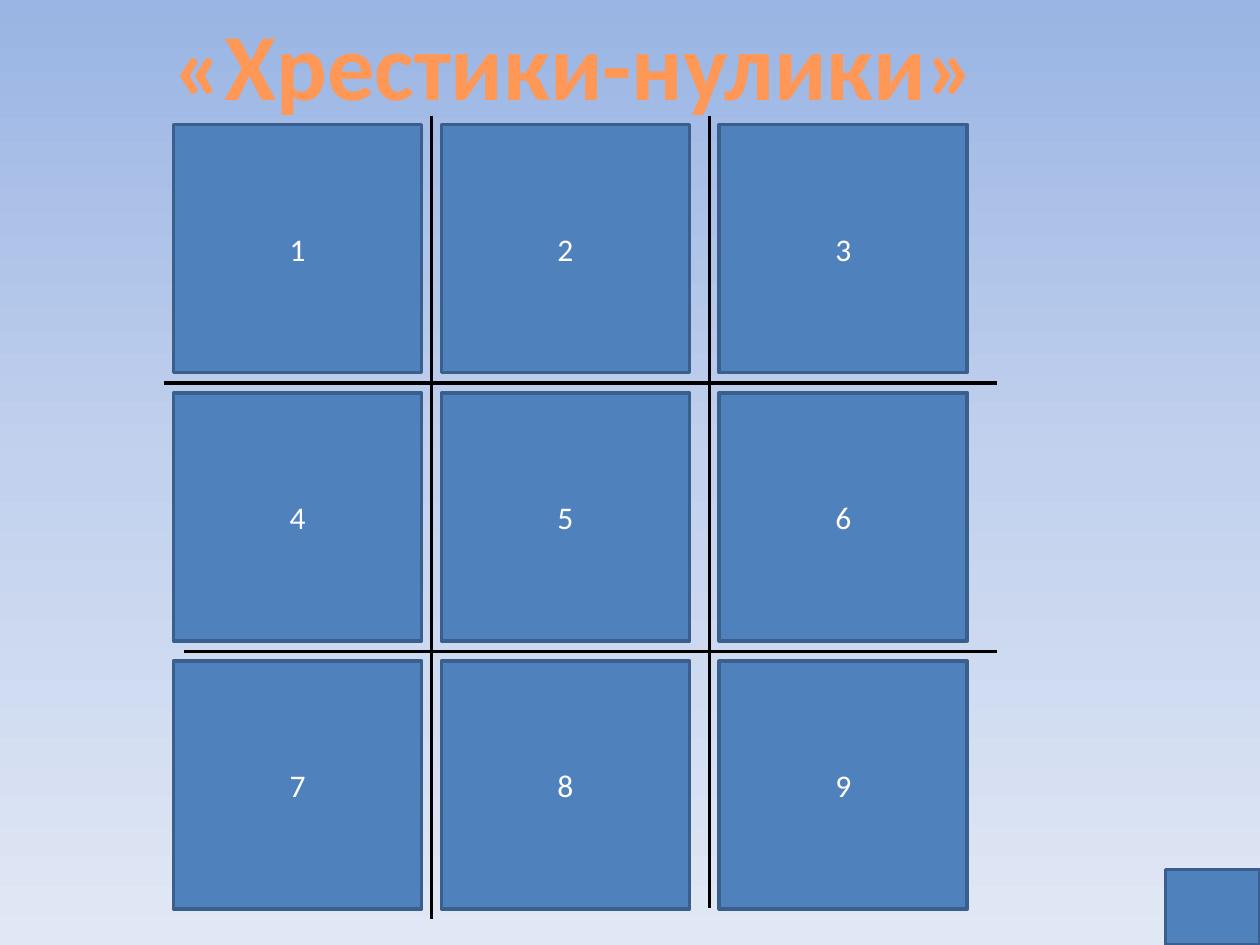
"""Build a tic-tac-toe game board slide with nine numbered cells."""
from copy import deepcopy

from pptx import Presentation
from pptx.dml.color import RGBColor
from pptx.enum.shapes import MSO_CONNECTOR, MSO_SHAPE
from pptx.enum.text import MSO_ANCHOR, MSO_AUTO_SIZE, PP_ALIGN
from pptx.oxml.ns import qn
from pptx.util import Cm, Pt
from lxml.etree import SubElement

COLORS = {
    "cell": "4F81BD", "cell_edge": "3A5F8C", "digit": "FFFFFF", "grid": "000000",
    "sky_top": "9AB5E4", "sky_middle": "C2D1ED", "sky_bottom": "E1E8F5",
    "title_top": "9D4700", "title_middle": "FF9856", "title_bottom": "FFF5F1",
}
FONT = "Calibri"


def set_gradient(fill, owner, stops):
    fill.gradient()
    fill.gradient_angle = 270
    stop_list = owner.xpath(".//a:gsLst")[0]
    stop_list.append(deepcopy(stop_list[-1]))
    for stop, (position, color) in zip(fill.gradient_stops, stops):
        stop.position = position
        stop.color.rgb = RGBColor.from_string(COLORS[color])


def add_square(left, top, width, height):
    square = slide.shapes.add_shape(
        MSO_SHAPE.RECTANGLE, Cm(left), Cm(top), Cm(width), Cm(height))
    square.shadow.inherit = False
    square.fill.solid()
    square.fill.fore_color.rgb = RGBColor.from_string(COLORS["cell"])
    square.line.color.rgb = RGBColor.from_string(COLORS["cell_edge"])
    square.line.width = Pt(2)
    return square


prs = Presentation()
prs.slide_width, prs.slide_height = Cm(25.4), Cm(19.05)
slide = prs.slides.add_slide(prs.slide_layouts[6])
set_gradient(slide.background.fill, slide.element,
             [(0, "sky_top"), (0.5, "sky_middle"), (1, "sky_bottom")])

for x1, y1, x2, y2 in [
    (8.7, 2.33, 8.7, 18.52),
    (14.3, 2.33, 14.3, 18.31),
    (20.1, 7.72, 3.3, 7.72),
    (20.1, 13.13, 3.7, 13.13),
]:
    grid_line = slide.shapes.add_connector(
        MSO_CONNECTOR.STRAIGHT, Cm(x1), Cm(y1), Cm(x2), Cm(y2))
    grid_line.line.color.rgb = RGBColor.from_string(COLORS["grid"])
    grid_line.line.width = Pt(2)
    SubElement(grid_line.element.spPr, qn("a:effectLst"))

for row in range(3):
    for column, left in enumerate([3.5, 8.9, 14.5]):
        cell = add_square(left, 2.51 + 5.41 * row, 5, 5)
        cell.text_frame.vertical_anchor = MSO_ANCHOR.MIDDLE
        paragraph = cell.text_frame.paragraphs[0]
        paragraph.alignment = PP_ALIGN.CENTER
        digit = paragraph.add_run()
        digit.text = str(3 * row + column + 1)
        digit.font.name = FONT
        digit.font.size = Pt(18)
        digit.font.color.rgb = RGBColor.from_string(COLORS["digit"])

title = slide.shapes.add_textbox(Cm(3.17), Cm(0), Cm(16.87), Cm(2.57))
title.text_frame.word_wrap = False
title.text_frame.auto_size = MSO_AUTO_SIZE.SHAPE_TO_FIT_TEXT
heading = title.text_frame.paragraphs[0]
heading.alignment = PP_ALIGN.CENTER
game_name = heading.add_run()
game_name.text = "«Хрестики-нулики»"
game_name.font.name = FONT
game_name.font.size = Pt(54)
game_name.font.bold = True
set_gradient(game_name.font.fill, title.element,
             [(0, "title_top"), (0.78, "title_middle"), (1, "title_bottom")])

add_square(23.5, 17.53, 1.9, 1.52)

prs.save("out.pptx")
